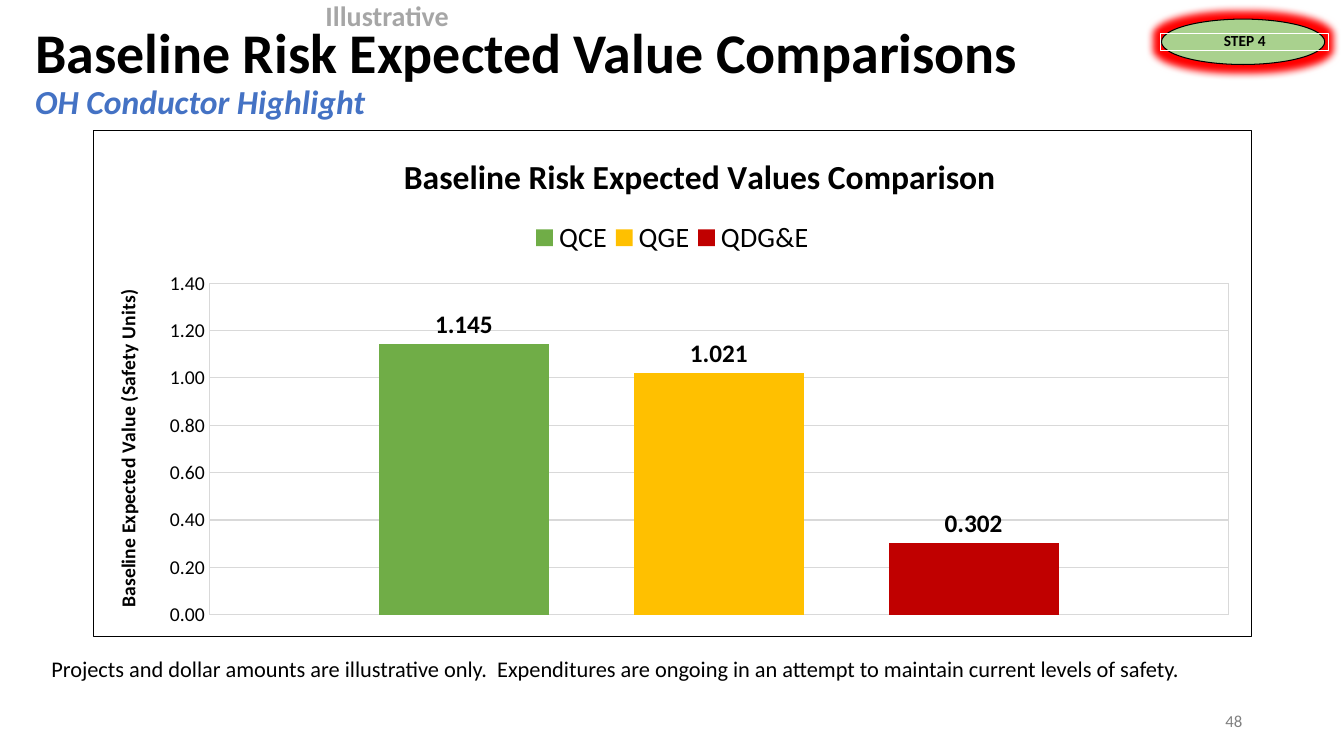
from dataclasses import dataclass

from lxml import etree
from pptx import Presentation
from pptx import util as u
from pptx.chart import data as chart_data
from pptx.dml.color import RGBColor
from pptx.enum import chart as charts, shapes, text
from pptx.oxml import ns


@dataclass(frozen=True)
class Theme:
    font: str = "Calibri"
    black: str = "000000"
    white: str = "FFFFFF"
    blue: str = "4472C4"
    gray: str = "808080"
    pale_gray: str = "A6A6A6"
    grid: str = "D9D9D9"
    badge: str = "A9D18E"
    glow: str = "FF0000"
    green: str = "70AD47"
    gold: str = "FFC000"
    red: str = "C00000"
    headline: int = 40
    heading: int = 24
    medium: int = 20
    value: int = 18
    note: int = 16
    axis: int = 14
    small: int = 12
    badge_text: int = 11
    hairline: float = 0.75


@dataclass(frozen=True)
class Area:
    """Left, top, width and height in percent of the enclosing frame."""
    left: float
    top: float
    width: float
    height: float


@dataclass(frozen=True)
class Span:
    words: str
    size: int
    color: str
    bold: bool = False
    italic: bool = False


@dataclass(frozen=True)
class Label:
    area: Area
    spans: tuple[Span, ...]
    align: text.PP_ALIGN = text.PP_ALIGN.LEFT
    anchor: text.MSO_ANCHOR = text.MSO_ANCHOR.TOP
    spacing: float = 1.0


@dataclass(frozen=True)
class Bar:
    name: str
    amount: float
    color: str


THEME = Theme()
WIDTH, HEIGHT = u.Inches(13.33), u.Inches(7.5)

LABELS = (
    Label(Area(1.88, 0, 91.22, 19.33),
          (Span("Baseline Risk Expected Value Comparisons", THEME.headline, THEME.black, True),
           Span("OH Conductor Highlight", THEME.heading, THEME.blue, True, True)),
          anchor=text.MSO_ANCHOR.MIDDLE, spacing=0.9),
    Label(Area(70.67, 92.67, 22.5, 5.33), (Span("48", THEME.small, THEME.gray),),
          text.PP_ALIGN.RIGHT, text.MSO_ANCHOR.MIDDLE),
    Label(Area(23.48, -0.8, 25.43, 5.87),
          (Span("Illustrative", THEME.medium, THEME.pale_gray, True),)),
    Label(Area(3.08, 86, 96.92, 4.93),
          (Span("Projects and dollar amounts are illustrative only.  Expenditures are ongoing "
                "in an attempt to maintain current levels of safety.", THEME.note, THEME.black),)),
)
STEP = Label(Area(86.35, 4.4, 12.53, 2.27),
             (Span("STEP 4", THEME.badge_text, THEME.black, True),),
             text.PP_ALIGN.CENTER, text.MSO_ANCHOR.MIDDLE, 0.9)
BADGE_AREA = Area(86.42, 2.53, 12.15, 6)
CHART_AREA = Area(6.9, 17.2, 86.27, 67.07)

# Areas inside the chart frame
PLOT_AREA = Area(10, 30.2, 88, 65.5)
TITLE_AREA = Area(26.3, 3.5, 52, 8)
LEGEND_AREA = Area(37.5, 17.2, 25, 8)

BARS = (
    Bar("QCE", 1.145, THEME.green),
    Bar("QGE", 1.021, THEME.gold),
    Bar("QDG&E", 0.302, THEME.red),
)


def place(area: Area) -> tuple[int, int, int, int]:
    return (int(WIDTH * area.left / 100), int(HEIGHT * area.top / 100),
            int(WIDTH * area.width / 100), int(HEIGHT * area.height / 100))


def style_font(font, size: int, color: str, bold: bool = False, italic: bool = False) -> None:
    font.name, font.size, font.bold, font.italic = THEME.font, u.Pt(size), bold, italic
    font.color.rgb = RGBColor.from_string(color)


def style_line(line, color: str) -> None:
    line.color.rgb = RGBColor.from_string(color)
    line.width = u.Pt(THEME.hairline)


def add_label(page, label: Label):
    box = page.shapes.add_textbox(*place(label.area))
    frame = box.text_frame
    frame.word_wrap = True
    frame.vertical_anchor = label.anchor
    para = frame.paragraphs[0]
    para.text = "\v".join(span.words for span in label.spans)
    para.alignment, para.line_spacing = label.align, label.spacing
    for run, span in zip(para.runs, label.spans):
        style_font(run.font, span.size, span.color, span.bold, span.italic)
    return box


def add_badge(page) -> None:
    # Glowing ellipse
    oval = page.shapes.add_shape(shapes.MSO_SHAPE.OVAL, *place(BADGE_AREA))
    oval.fill.solid()
    oval.fill.fore_color.rgb = RGBColor.from_string(THEME.badge)
    style_line(oval.line, THEME.black)
    oval.shadow.inherit = False
    effects = oval._element.spPr.find(ns.qn("a:effectLst"))
    glow = etree.SubElement(effects, ns.qn("a:glow"), rad=str(u.Pt(11)))
    etree.SubElement(glow, ns.qn("a:srgbClr"), val=THEME.glow)
    # Outlined step name
    box = add_label(page, STEP)
    style_line(box.line, THEME.white)
    frame = box.text_frame
    frame.margin_left = frame.margin_right = u.Inches(0.02)
    frame.margin_top = frame.margin_bottom = u.Inches(0.02)


def make_layout(area: Area, inner: bool = False):
    layout = etree.Element(ns.qn("c:layout"))
    manual = etree.SubElement(layout, ns.qn("c:manualLayout"))
    settings = {"layoutTarget": "inner"} if inner else {}
    settings |= {"xMode": "edge", "yMode": "edge", "x": area.left / 100, "y": area.top / 100,
                 "w": area.width / 100, "h": area.height / 100}
    for name, setting in settings.items():
        etree.SubElement(manual, ns.qn(f"c:{name}"), val=str(setting))
    return layout


def set_layout(parent, layout, after: str = "") -> None:
    for old in parent.findall(ns.qn("c:layout")):
        parent.remove(old)
    if after:
        parent.find(ns.qn(after)).addnext(layout)
    else:
        parent.insert(0, layout)


def add_border(chart) -> None:
    border = etree.Element(ns.qn("c:spPr"))
    line = etree.SubElement(border, ns.qn("a:ln"), w=str(u.Pt(THEME.hairline)))
    fill = etree.SubElement(line, ns.qn("a:solidFill"))
    etree.SubElement(fill, ns.qn("a:srgbClr"), val=THEME.black)
    chart._chartSpace.find(ns.qn("c:chart")).addnext(border)


def add_comparison(page) -> None:
    source = chart_data.CategoryChartData()
    source.categories = ["1"]
    for bar in BARS:
        source.add_series(bar.name, [bar.amount])
    chart = page.shapes.add_chart(charts.XL_CHART_TYPE.COLUMN_CLUSTERED,
                                  *place(CHART_AREA), source).chart
    style_font(chart.font, THEME.axis, THEME.black)
    add_border(chart)

    # Title and legend
    chart.has_title = chart.has_legend = True
    title, legend = chart.chart_title, chart.legend
    title.text_frame.text = "Baseline Risk Expected Values Comparison"
    style_font(title.text_frame.paragraphs[0].runs[0].font, THEME.heading, THEME.black, True)
    legend.position = charts.XL_LEGEND_POSITION.TOP
    legend.include_in_layout = False
    style_font(legend.font, THEME.medium, THEME.black)

    # Axes
    scale, category = chart.value_axis, chart.category_axis
    for axis in (scale, category):
        axis.has_major_gridlines = True
        style_line(axis.major_gridlines.format.line, THEME.grid)
    category.visible = False
    scale.minimum_scale, scale.maximum_scale, scale.major_unit = 0, 1.4, 0.2
    scale.major_tick_mark = charts.XL_TICK_MARK.NONE
    scale.format.line.fill.background()
    scale.tick_labels.number_format = "0.00"
    scale.tick_labels.number_format_is_linked = False
    caption = scale.axis_title.text_frame
    caption.text = "Baseline Expected Value (Safety Units)"
    caption._txBody.bodyPr.set("rot", "-5400000")
    caption._txBody.bodyPr.set("vert", "horz")
    style_font(caption.paragraphs[0].runs[0].font, THEME.axis, THEME.black, True)

    # Columns and their values
    plot = chart.plots[0]
    plot.gap_width, plot.overlap, plot.vary_by_categories = 200, -50, False
    for series, bar in zip(plot.series, BARS):
        series.format.fill.solid()
        series.format.fill.fore_color.rgb = RGBColor.from_string(bar.color)
        labels = series.data_labels
        labels.show_value = True
        labels.number_format, labels.number_format_is_linked = "#,##0.000", False
        labels.position = charts.XL_LABEL_POSITION.OUTSIDE_END
        style_font(labels.font, THEME.value, THEME.black, True)

    # Placement inside the frame
    set_layout(chart._chartSpace.chart.plotArea, make_layout(PLOT_AREA, inner=True))
    set_layout(title._element, make_layout(TITLE_AREA), "c:tx")
    set_layout(legend._element, make_layout(LEGEND_AREA), "c:legendPos")


def main() -> None:
    deck = Presentation()
    deck.slide_width, deck.slide_height = WIDTH, HEIGHT
    page = deck.slides.add_slide(deck.slide_layouts[6])
    add_comparison(page)
    add_badge(page)
    for label in LABELS:
        add_label(page, label)
    deck.save("out.pptx")


if __name__ == "__main__":
    main()
